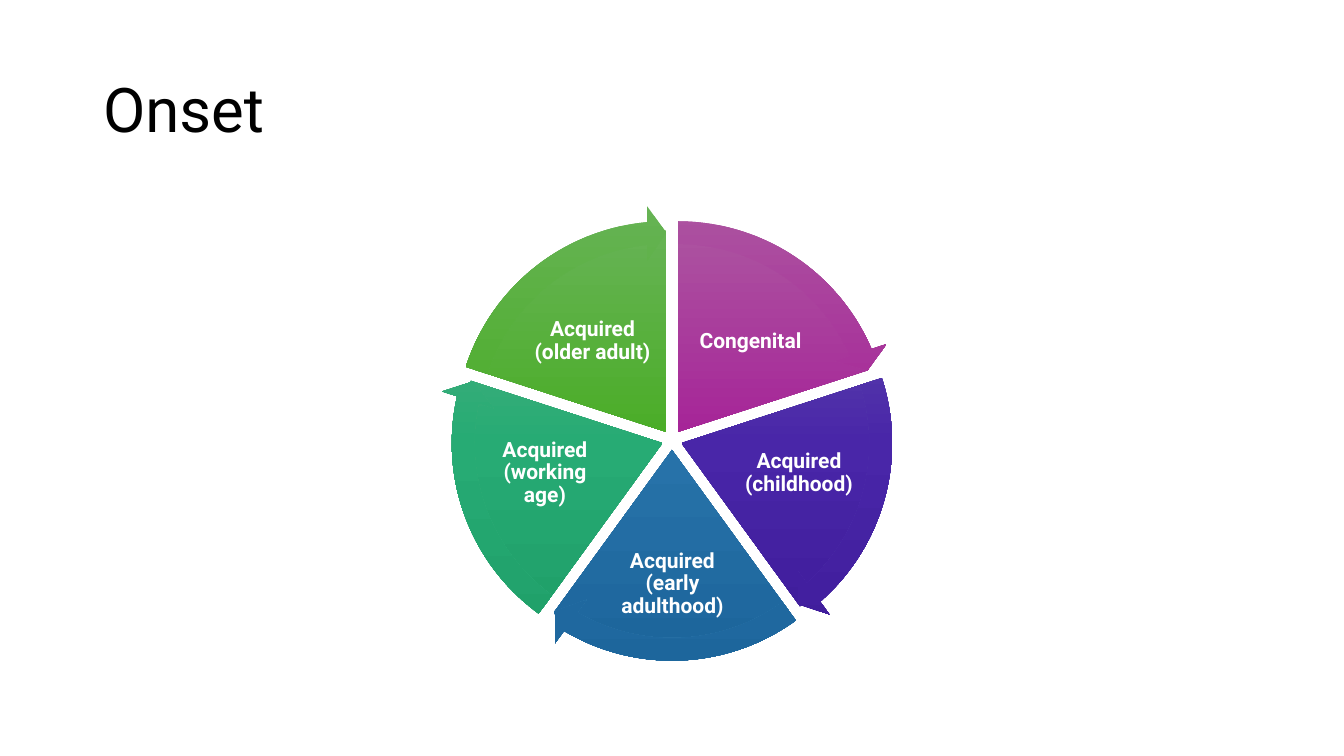
from copy import deepcopy
from math import cos, radians, sin

from pptx import Presentation
from pptx.dml.color import RGBColor
from pptx.enum.shapes import MSO_SHAPE
from pptx.enum.text import MSO_ANCHOR, PP_ALIGN
from pptx.oxml.ns import qn
from pptx.util import Emu, Pt

PIE, ARROW = MSO_SHAPE.PIE, MSO_SHAPE.CIRCULAR_ARROW
MIDDLE = MSO_ANCHOR.MIDDLE
LEFT, CENTER = PP_ALIGN.LEFT, PP_ALIGN.CENTER

# Content: label, label box (left, top, width, height in px), gradient
TITLE = "Onset"
TITLE_BOX = (93, 40, 1159, 146)
STAGES = [
    ("Congenital", (686, 298, 129, 87), ("AC53A0", "A62598", "991C8B")),
    ("Acquired (childhood)", (739, 425, 120, 96), ("6553AE", "4926A8", "3E1C9A")),
    ("Acquired (early adulthood)", (615, 531, 115, 106), ("5382AF", "2772A9", "1D669C")),
    ("Acquired (working age)", (485, 425, 120, 96), ("54B183", "27AB74", "1E9E68")),
    ("Acquired (older adult)", (528, 298, 129, 87), ("66B354", "4BAD28", "409F1E")),
]
BLACK = RGBColor(0x00, 0x00, 0x00)
WHITE = RGBColor(0xFF, 0xFF, 0xFF)
FONT = "Roboto"

# Wheel geometry in px and degrees
SLIDE_WIDTH, SLIDE_HEIGHT = 1344, 756
HUB_X, HUB_Y = 672, 440
PUSH = 10            # distance of each slice from the hub
PIE_SIZE, ARROW_SIZE = 403, 453
STEP = 360 / len(STAGES)
ANGLE_UNIT = 0.6     # adjustment value of one degree
HEAD = 3.28          # arrowhead length as an adjustment value
BAND, HEAD_WIDTH = 0.05, 0.06


def px(value):
    return Emu(round(value * 12192000 / SLIDE_WIDTH))


def format_text(text_frame, text, size, color, align, bold=False):
    text_frame.text = text
    text_frame.word_wrap = True
    text_frame.vertical_anchor = MIDDLE
    paragraph = text_frame.paragraphs[0]
    paragraph.alignment = align
    paragraph.line_spacing = 0.9
    font = paragraph.runs[0].font
    font.name, font.size, font.bold = FONT, Pt(size), bold
    font.color.rgb = color


def fill_gradient(shape, colors):
    shape.fill.gradient()
    shape.fill.gradient_angle = 270
    first_stop = shape._element.spPr.find(".//" + qn("a:gs"))
    first_stop.addnext(deepcopy(first_stop))
    for index, (stop, color) in enumerate(zip(shape.fill.gradient_stops, colors)):
        stop.position = index / 2
        stop.color.rgb = RGBColor.from_string(color)


def add_part(wheel, kind, size, index, colors, adjustments):
    """Add a slice or its arrow, pushed out along the slice's middle line."""
    middle = radians(270 + STEP * (index + 0.5))
    left = HUB_X + PUSH * cos(middle) - size / 2
    top = HUB_Y + PUSH * sin(middle) - size / 2
    shape = wheel.shapes.add_shape(kind, px(left), px(top), px(size), px(size))
    for position, value in enumerate(adjustments):
        shape.adjustments[position] = value
    shape.shadow.inherit = False
    shape.line.fill.background()
    fill_gradient(shape, colors)


def slice_angles(index):
    start = (270 + STEP * index) % 360
    return start * ANGLE_UNIT, (start + STEP) % 360 * ANGLE_UNIT


presentation = Presentation()
presentation.slide_width, presentation.slide_height = px(SLIDE_WIDTH), px(SLIDE_HEIGHT)
slide = presentation.slides.add_slide(presentation.slide_layouts[5])

# Title
title = slide.shapes.title
title.left, title.top, title.width, title.height = map(px, TITLE_BOX)
format_text(title.text_frame, TITLE, 44, BLACK, LEFT)

# Slices with their labels
wheel = slide.shapes.add_group_shape()
for index, (label, box, colors) in enumerate(STAGES):
    add_part(wheel, PIE, PIE_SIZE, index, colors, slice_angles(index))
    text_frame = wheel.shapes.add_textbox(*map(px, box)).text_frame
    text_frame.margin_left = text_frame.margin_right = px(2)
    text_frame.margin_top = text_frame.margin_bottom = px(2)
    format_text(text_frame, label, 15, WHITE, CENTER, bold=True)

# Arrows around the rim
for index, (_, _, colors) in enumerate(STAGES):
    start, end = slice_angles(index)
    add_part(wheel, ARROW, ARROW_SIZE, index, colors,
             (BAND, HEAD, end - HEAD, start, HEAD_WIDTH))

presentation.save("out.pptx")
